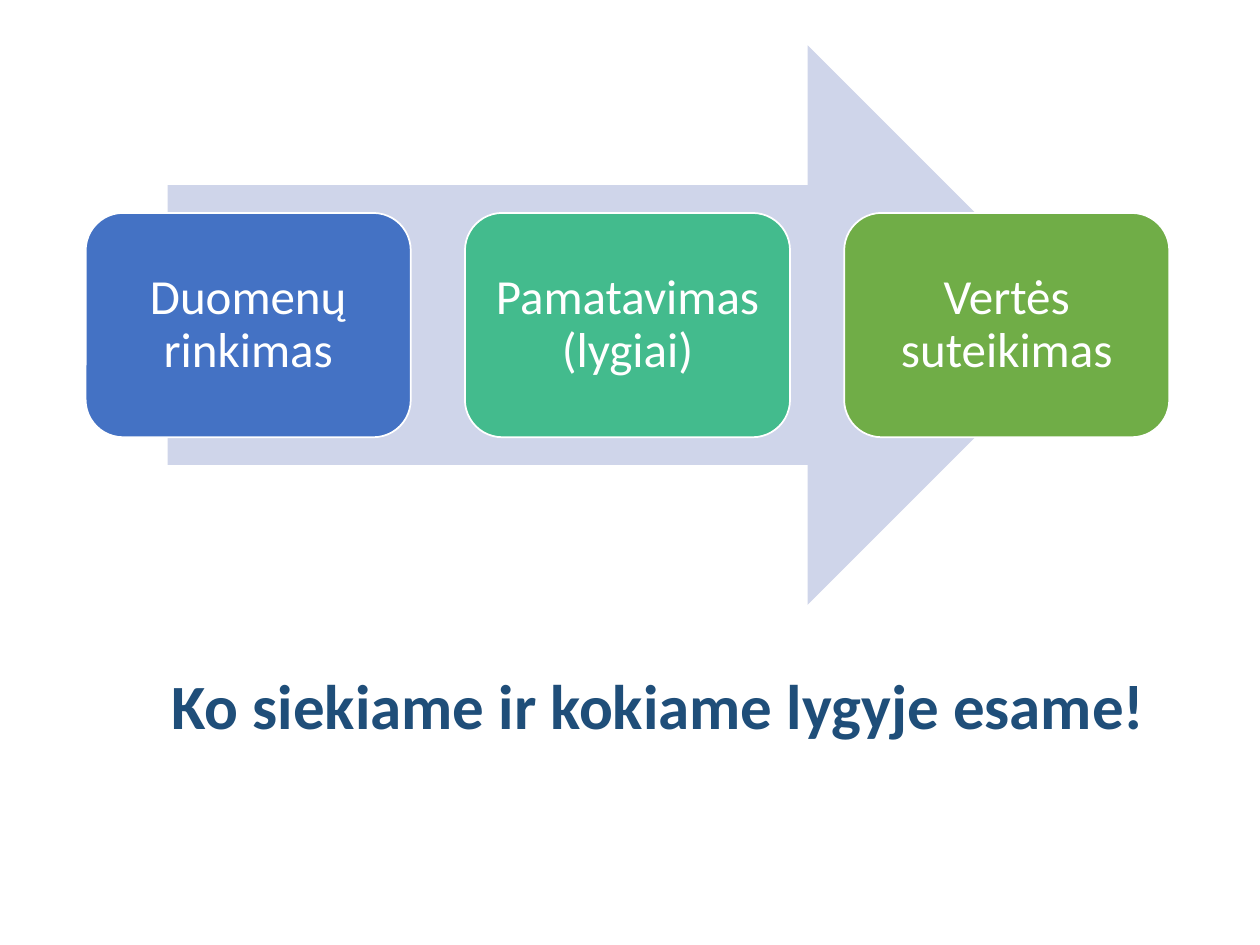
from dataclasses import dataclass

import pptx
import pptx.dml.color
import pptx.enum.shapes
import pptx.enum.text
import pptx.util

Inches = pptx.util.Inches
Pt = pptx.util.Pt
MSO_SHAPE = pptx.enum.shapes.MSO_SHAPE
PP_ALIGN = pptx.enum.text.PP_ALIGN

FONT = "Calibri"
COLORS = {
    "arrow": "CFD5EA",
    "collect": "4472C4",
    "measure": "43BB8D",
    "value": "70AD47",
    "white": "FFFFFF",
    "motto": "1F4E79",
}
STEP_LEFT, STEP_TOP = 0.68, 1.69
STEP_WIDTH, STEP_HEIGHT = 2.58, 1.78
STEP_GAP = 0.43
STEP_INSET = 0.12


@dataclass
class Step:
    label: str
    color: str


STEPS = [
    Step("Duomenų rinkimas", "collect"),
    Step("Pamatavimas (lygiai)", "measure"),
    Step("Vertės suteikimas", "value"),
]


def rgb(name: str) -> pptx.dml.color.RGBColor:
    return pptx.dml.color.RGBColor.from_string(COLORS[name])


def add_run(p, text: str, size: float, color: str, bold: bool = False) -> None:
    r = p.add_run()
    r.text = text
    r.font.name = FONT
    r.font.size = Pt(size)
    r.font.bold = bold
    r.font.color.rgb = rgb(color)


def add_filled_shape(s, kind, left: float, top: float, width: float,
                     height: float, color: str):
    sp = s.shapes.add_shape(kind, Inches(left), Inches(top),
                            Inches(width), Inches(height))
    sp.shadow.inherit = False
    sp.fill.solid()
    sp.fill.fore_color.rgb = rgb(color)
    sp.line.fill.background()
    return sp


def add_step(s, index: int, step: Step) -> None:
    left = STEP_LEFT + index * (STEP_WIDTH + STEP_GAP)
    sp = add_filled_shape(s, MSO_SHAPE.ROUNDED_RECTANGLE, left, STEP_TOP,
                          STEP_WIDTH, STEP_HEIGHT, step.color)
    sp.line.color.rgb = rgb("white")
    sp.line.width = Pt(1)
    tf = sp.text_frame
    tf.word_wrap = True
    tf.vertical_anchor = pptx.enum.text.MSO_ANCHOR.MIDDLE
    tf.margin_left = tf.margin_right = Inches(STEP_INSET)
    tf.margin_top = tf.margin_bottom = Inches(STEP_INSET)
    p = tf.paragraphs[0]
    p.alignment = PP_ALIGN.CENTER
    p.line_spacing = 0.9
    add_run(p, step.label, 28, "white")


def add_motto(s) -> None:
    sp = s.shapes.add_textbox(Inches(1.26), Inches(5.24),
                              Inches(8.01), Inches(0.71))
    tf = sp.text_frame
    tf.word_wrap = False
    tf.auto_size = pptx.enum.text.MSO_AUTO_SIZE.SHAPE_TO_FIT_TEXT
    add_run(tf.paragraphs[0], "Ko siekiame ir kokiame lygyje esame!",
            36, "motto", bold=True)


def main() -> None:
    prs = pptx.Presentation()
    prs.slide_width, prs.slide_height = Inches(10), Inches(7.5)
    s = prs.slides.add_slide(prs.slide_layouts[6])
    add_filled_shape(s, MSO_SHAPE.RIGHT_ARROW, 1.33, 0.36, 7.3, 4.44, "arrow")
    for index, step in enumerate(STEPS):
        add_step(s, index, step)
    add_motto(s)
    prs.save("out.pptx")


if __name__ == "__main__":
    main()
